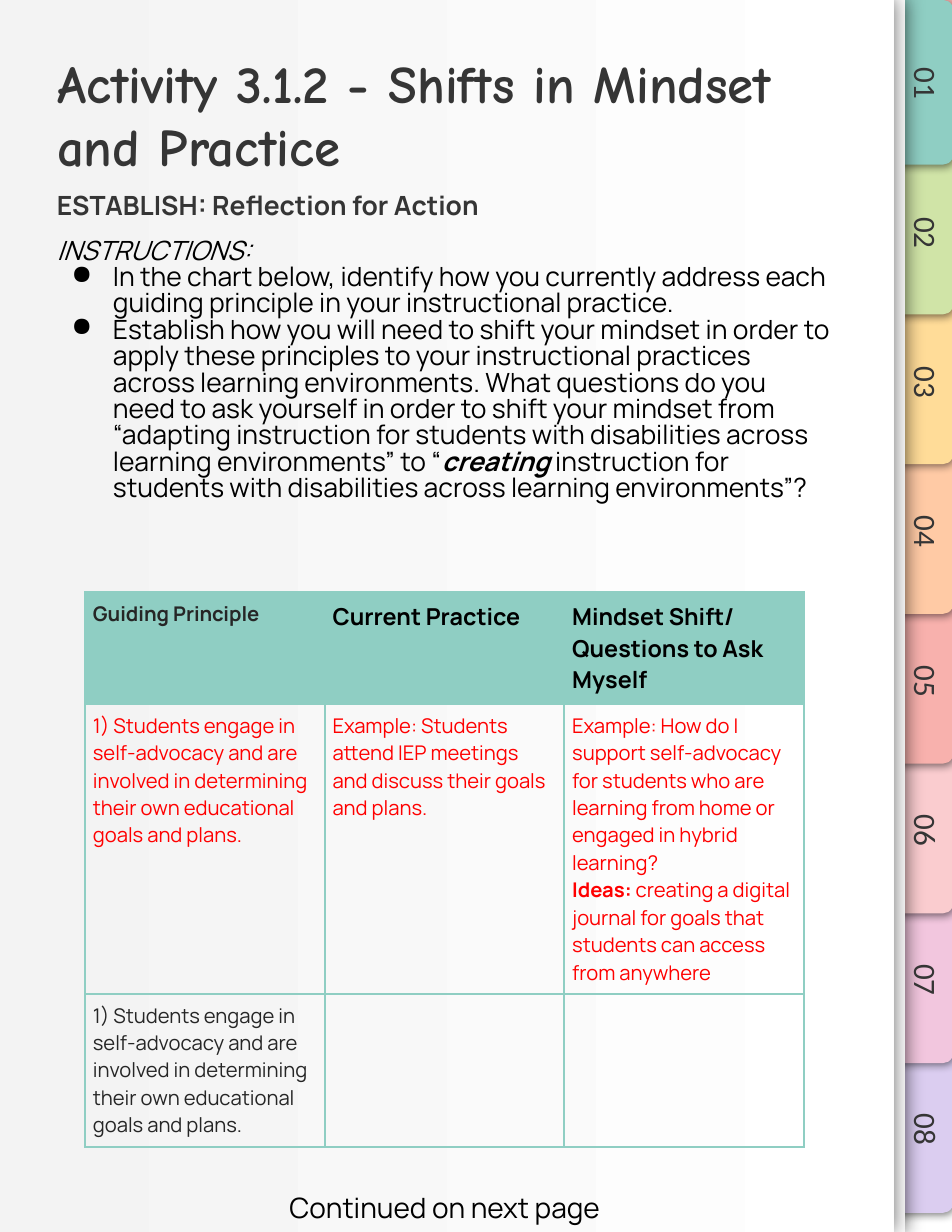
from lxml import etree
from pptx import Presentation
from pptx.dml.color import RGBColor
from pptx.enum.shapes import MSO_SHAPE
from pptx.enum.text import MSO_ANCHOR, MSO_AUTO_SIZE, PP_ALIGN
from pptx.oxml import parse_xml
from pptx.oxml.ns import nsdecls, qn
from pptx.util import Inches, Pt

RECT, TAB = MSO_SHAPE.RECTANGLE, MSO_SHAPE.ROUND_2_SAME_RECTANGLE
TOP, BOTTOM = MSO_ANCHOR.TOP, MSO_ANCHOR.BOTTOM
LEFT, CENTER = PP_ALIGN.LEFT, PP_ALIGN.CENTER
NO_FIT, GROW = MSO_AUTO_SIZE.NONE, MSO_AUTO_SIZE.SHAPE_TO_FIT_TEXT

TEAL, DARK, INK, BLACK, RED, WHITE = "8FCEC3", "353535", "262626", "000000", "FF0000", "FFFFFF"
TAB_COLORS = [TEAL, "D0E4A7", "FFDC98", "FFCAA5", "F8B1AD", "FACCCF", "F2C6DE", "DBCDF0"]
TAB_SHADOW = (5.6, 1.5, 61)
PAGE_SHADOW = (12.4, 0.8, 0)

PRINCIPLE = ("1) Students engage in self-advocacy and are involved in determining "
             "their own educational goals and plans.")
HEADERS = [("Guiding Principle", 13, INK), ("Current Practice", 15, BLACK),
           ("Mindset Shift/ Questions to Ask Myself", 15, BLACK)]
EXAMPLES = [
    [[(PRINCIPLE, False)]],
    [[("Example: Students attend IEP meetings and discuss their goals and plans.", False)]],
    [[("Example: How do I support self-advocacy for students who are learning from home "
       "or engaged in hybrid learning?", False)],
     [("Ideas:", True),
      (" creating a digital journal for goals that students can access from anywhere", False)]],
]
BULLETS = [
    [("In the chart below, identify how you currently address each guiding principle "
      "in your instructional practice.", False)],
    [("Establish how you will need to shift your mindset in order to apply these principles "
      "to your instructional practices across learning environments. What questions do you "
      "need to ask yourself in order to shift your mindset from “adapting instruction for "
      "students with disabilities across learning environments” to “", False),
     ("creating", True),
     (" instruction for students with disabilities across learning environments”?", False)],
]


def rgb(color):
    """Return the colour for a hex string."""
    return RGBColor.from_string(color)


def add_run(p, text, size, color, font="Manrope", bold=False, italic=False):
    """Add one formatted run to a paragraph."""
    r = p.add_run()
    r.text = text
    r.font.size, r.font.name = Pt(size), font
    r.font.bold, r.font.italic = bold, italic
    r.font.color.rgb = rgb(color)


def next_paragraph(tf):
    """Return the first paragraph while it is empty, else a new one."""
    p = tf.paragraphs[0]
    return tf.add_paragraph() if p.runs else p


def set_frame(tf, anchor=TOP, margin=0.1, fit=NO_FIT):
    """Set wrapping, anchor and insets of a text frame."""
    tf.word_wrap, tf.auto_size, tf.vertical_anchor = True, fit, anchor
    tf.margin_left = tf.margin_right = tf.margin_top = tf.margin_bottom = Inches(margin)


def add_text_box(s, x, y, w, h, anchor=TOP, fit=NO_FIT):
    """Add a wrapping text box."""
    sp = s.shapes.add_textbox(Inches(x), Inches(y), Inches(w), Inches(h))
    set_frame(sp.text_frame, anchor, fit=fit)
    return sp


def add_panel(s, kind, x, y, w, h, color, shadow=None):
    """Add a borderless filled shape with an optional shadow."""
    sp = s.shapes.add_shape(kind, Inches(x), Inches(y), Inches(w), Inches(h))
    sp.fill.solid()
    sp.fill.fore_color.rgb = rgb(color)
    sp.line.fill.background()
    sp.shadow.inherit = False
    if shadow:
        blur, dist, angle = shadow
        effects = sp.element.spPr.find(qn("a:effectLst"))
        effects.append(parse_xml(
            f'<a:outerShdw {nsdecls("a")} blurRad="{Pt(blur)}" dist="{Pt(dist)}" '
            f'dir="{angle * 60000}" algn="bl" rotWithShape="0"><a:srgbClr val="000000">'
            '<a:alpha val="50000"/></a:srgbClr></a:outerShdw>'))
    return sp


def add_notebook(s):
    """Add the page and its column of index tabs."""
    edge = add_panel(s, RECT, 8.08, 8.58, 0.42, 2.42, WHITE)
    edge.line.color.rgb, edge.line.width = rgb(WHITE), Pt(0.75)
    for i, color in reversed(list(enumerate(TAB_COLORS))):
        tab = add_panel(s, TAB, 7.51, 0.47 + 1.337 * i, 1.47, 0.53, color, TAB_SHADOW)
        tab.rotation = 90
    add_panel(s, RECT, 0.1, 0, 7.98, 11, WHITE, PAGE_SHADOW)
    page = add_panel(s, RECT, 0, 0, 7.98, 11, WHITE, PAGE_SHADOW)
    page.fill.gradient()
    page.fill.gradient_angle = 0
    for stop, color in zip(page.fill.gradient_stops, ("F3F3F3", WHITE)):
        stop.color.rgb = rgb(color)
    for i in range(len(TAB_COLORS)):
        label = add_text_box(s, 7.6, 0.43 + 1.334 * i, 1.44, 0.63, BOTTOM)
        label.rotation = 90
        p = label.text_frame.paragraphs[0]
        p.alignment = CENTER
        add_run(p, f"{i + 1:02d}", 20, DARK, "Calibri")


def format_title(s):
    """Fill the title placeholder and bring it above the page."""
    title = s.shapes.title
    s.shapes.element.append(title.element)
    title.left, title.top = Inches(0.41), Inches(0.35)
    title.width, title.height = Inches(7.12), Inches(0.63)
    set_frame(title.text_frame)
    p = title.text_frame.paragraphs[0]
    p.alignment = LEFT
    add_run(p, "Activity 3.1.2 - Shifts in Mindset and Practice", 34, DARK, "Comic Neue", True)


def set_bullet(p):
    """Give a paragraph a black hanging bullet."""
    pPr = p._p.get_or_add_pPr()
    pPr.set("marL", str(Inches(0.5)))
    pPr.set("indent", str(Inches(-0.37)))
    color = etree.SubElement(pPr, qn("a:buClr"))
    etree.SubElement(color, qn("a:srgbClr")).set("val", BLACK)
    etree.SubElement(pPr, qn("a:buChar")).set("char", "●")


def add_instructions(s):
    """Add the subheading and the bulleted instructions."""
    tf = add_text_box(s, 0.41, 1.57, 7.12, 3.93).text_frame
    p = next_paragraph(tf)
    p.line_spacing = 1.06
    p.space_after = Pt(14.5)
    add_run(p, "ESTABLISH: Reflection for Action", 17, DARK, bold=True)
    p = next_paragraph(tf)
    p.line_spacing = 0.7
    add_run(p, "INSTRUCTIONS:", 17, BLACK, italic=True)
    for runs in BULLETS:
        p = next_paragraph(tf)
        p.line_spacing = 0.83
        set_bullet(p)
        for text, strong in runs:
            add_run(p, text, 17, BLACK, bold=strong, italic=strong)


def set_borders(cell):
    """Draw teal borders on all four sides of a cell."""
    tcPr = cell._tc.get_or_add_tcPr()
    for i, side in enumerate(("lnL", "lnR", "lnT", "lnB")):
        tcPr.insert(i, parse_xml(
            f'<a:{side} {nsdecls("a")} w="{Pt(1.5)}"><a:solidFill>'
            f'<a:srgbClr val="{TEAL}"/></a:solidFill></a:{side}>'))


def fill_cell(cell, paragraphs, size, color):
    """Write paragraphs of (text, bold) runs into a cell."""
    for runs in paragraphs:
        p = next_paragraph(cell.text_frame)
        for text, bold in runs:
            add_run(p, text, size, color, bold=bold)


def add_practice_table(s):
    """Add the table of guiding principles."""
    heights = (0.94, 2.15, 1.27)
    table = s.shapes.add_table(3, 3, Inches(0.76), Inches(5.29),
                               Inches(6.42), Inches(sum(heights))).table
    table.first_row = table.horz_banding = False
    for row, height in zip(table.rows, heights):
        row.height = Inches(height)
    for cell in table.iter_cells():
        cell.margin_left = cell.margin_right = Inches(0.07)
        cell.margin_top = cell.margin_bottom = Inches(0.07)
        cell.fill.background()
        set_borders(cell)
    for col, (text, size, color) in enumerate(HEADERS):
        cell = table.cell(0, col)
        cell.fill.solid()
        cell.fill.fore_color.rgb = rgb(TEAL)
        fill_cell(cell, [[(text, True)]], size, color)
        fill_cell(table.cell(1, col), EXAMPLES[col], 13, RED)
    fill_cell(table.cell(2, 0), EXAMPLES[0], 13, INK)


def main():
    """Build the activity page."""
    prs = Presentation()
    prs.slide_width, prs.slide_height = Inches(8.5), Inches(11)
    s = prs.slides.add_slide(prs.slide_layouts[5])
    s.background.fill.solid()
    s.background.fill.fore_color.rgb = rgb("F8B1AD")
    add_notebook(s)
    format_title(s)
    add_instructions(s)
    add_practice_table(s)
    p = add_text_box(s, 2.19, 10.53, 3.56, 0.5, fit=GROW).text_frame.paragraphs[0]
    p.alignment = CENTER
    add_run(p, "Continued on next page", 18, BLACK)
    prs.save("out.pptx")


if __name__ == "__main__":
    main()
